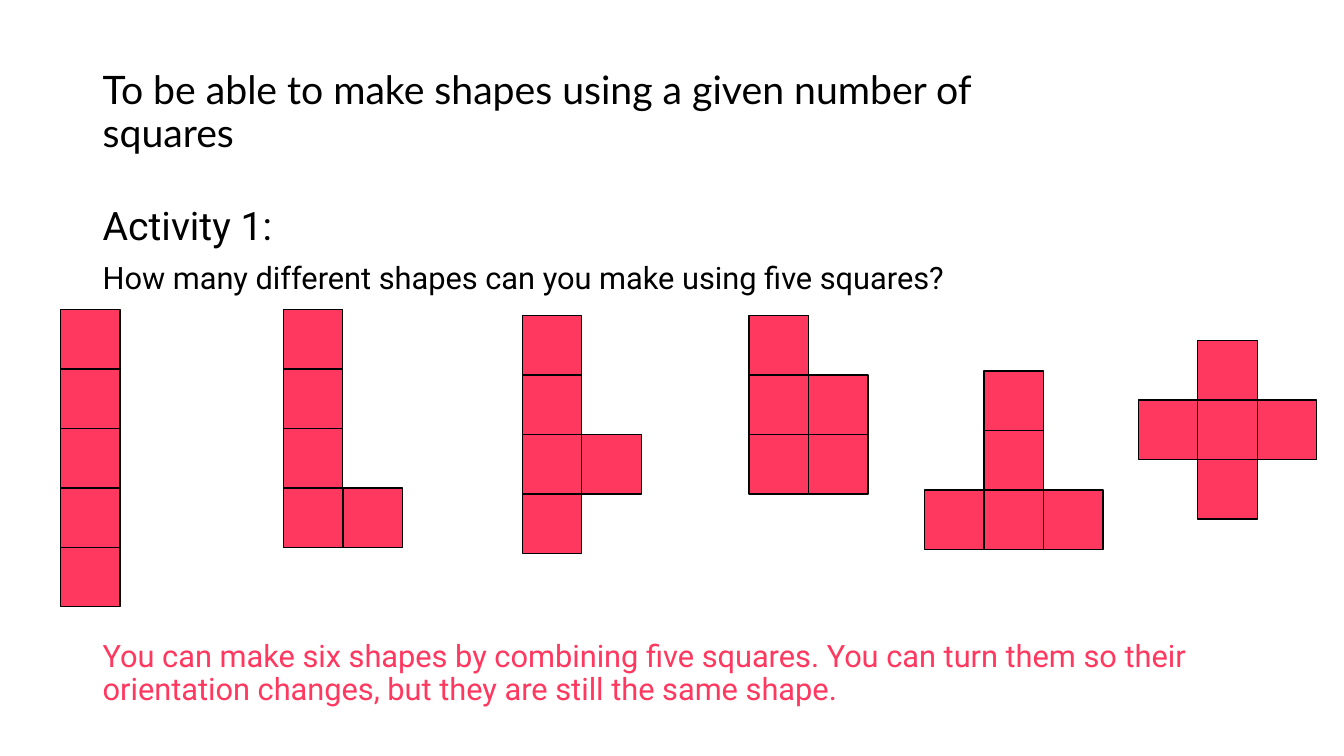
from dataclasses import dataclass

import pptx
import pptx.dml.color
import pptx.enum.shapes
import pptx.enum.text
import pptx.util
from pptx.util import Inches


@dataclass(frozen=True)
class Theme:
    black: str = "000000"
    pink: str = "FF3860"
    title_font: str = "Lato"
    body_font: str = "Roboto"
    heading_size: int = 28
    body_size: int = 22


THEME = Theme()
SQUARE = 0.59

# Left and top of each pentomino, then its rows: "#" marks a square.
PENTOMINOES = [
    (0.6, 3.07, ["#", "#", "#", "#", "#"]),
    (2.81, 3.07, ["#", "#", "#", "##"]),
    (5.18, 3.13, ["#", "#", "##", "#"]),
    (7.43, 3.13, ["#", "##", "##"]),
    (9.17, 3.68, [" #", " #", "###"]),
    (11.29, 3.38, [" #", "###", " #"]),
]


def rgb(value):
    return pptx.dml.color.RGBColor.from_string(value)


def add_text(s, left, top, width, height, lines, font, color=THEME.black,
             anchor=pptx.enum.text.MSO_ANCHOR.TOP):
    """Add a text box whose lines are (text, size) pairs."""
    tf = s.shapes.add_textbox(Inches(left), Inches(top), Inches(width), Inches(height)).text_frame
    tf.word_wrap = True
    tf.vertical_anchor = anchor
    for i, (text, size) in enumerate(lines):
        p = tf.add_paragraph() if i else tf.paragraphs[0]
        p.text = text
        p.line_spacing = 0.9
        p.space_before = pptx.util.Pt(10 if i else 0)
        p.font.name = font
        p.font.size = pptx.util.Pt(size)
        p.font.color.rgb = rgb(color)


def add_square(s, left, top):
    sp = s.shapes.add_shape(pptx.enum.shapes.MSO_SHAPE.RECTANGLE, Inches(left), Inches(top),
                            Inches(SQUARE), Inches(SQUARE))
    sp.shadow.inherit = False
    sp.fill.solid()
    sp.fill.fore_color.rgb = rgb(THEME.pink)
    sp.line.color.rgb = rgb(THEME.black)
    sp.line.width = pptx.util.Pt(1)


def add_pentomino(s, left, top, rows):
    for r, row in enumerate(rows):
        for c, cell in enumerate(row):
            if cell == "#":
                add_square(s, left + c * SQUARE, top + r * SQUARE)


def main():
    prs = pptx.Presentation()
    prs.slide_width, prs.slide_height = Inches(13.33), Inches(7.5)
    s = prs.slides.add_slide(prs.slide_layouts[6])

    add_text(s, 0.92, 0.4, 9.6, 1.45,
             [("To be able to make shapes using a given number of squares", THEME.heading_size)],
             THEME.title_font, anchor=pptx.enum.text.MSO_ANCHOR.MIDDLE)
    add_text(s, 0.92, 2, 11.5, 1.0,
             [("Activity 1:", THEME.heading_size),
              ("How many different shapes can you make using five squares?", THEME.body_size)],
             THEME.body_font)
    add_text(s, 0.92, 6.31, 11.5, 0.75,
             [("You can make six shapes by combining five squares. You can turn them so their "
               "orientation changes, but they are still the same shape.", THEME.body_size)],
             THEME.body_font, THEME.pink)
    for left, top, rows in PENTOMINOES:
        add_pentomino(s, left, top, rows)

    prs.save("out.pptx")


if __name__ == "__main__":
    main()
